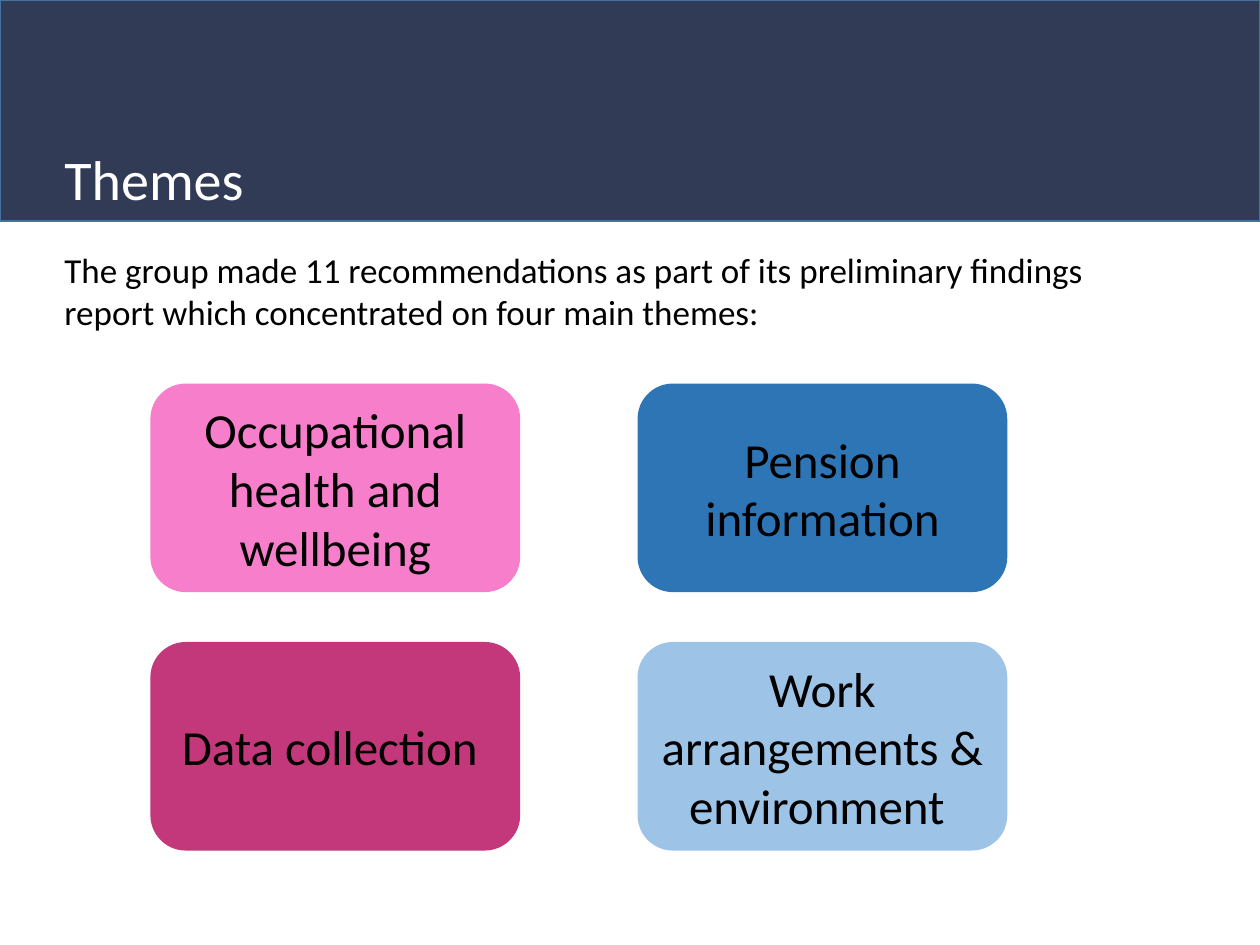
from dataclasses import dataclass

from pptx import Presentation
from pptx import util as u
from pptx.dml.color import RGBColor
from pptx.enum import shapes, text

FONT = "Calibri"
BLACK, WHITE = "000000", "FFFFFF"
NAVY, BANNER_EDGE = "313B55", "43739E"

# Theme grid, in centimetres
GRID_LEFT, GRID_TOP = 3.05, 7.75
COLUMN_STEP, ROW_STEP = 9.82, 5.21
BOX_WIDTH, BOX_HEIGHT = 7.42, 4.17


@dataclass
class Theme:
    label: str
    color: str
    column: int
    row: int


THEMES = [
    Theme("Occupational health and wellbeing", "F67ECB", 0, 0),
    Theme("Data collection ", "C3387A", 0, 1),
    Theme("Work arrangements & environment ", "9DC3E6", 1, 1),
    Theme("Pension information", "2E75B6", 1, 0),
]


def rgb(color: str) -> RGBColor:
    return RGBColor.from_string(color)


def write(shape, content: str, *, size: float, color: str = BLACK,
          align=text.PP_ALIGN.LEFT, anchor=text.MSO_ANCHOR.TOP,
          line_spacing: float = 1.0) -> None:
    frame = shape.text_frame
    frame.word_wrap = True
    frame.vertical_anchor = anchor
    paragraph = frame.paragraphs[0]
    paragraph.alignment = align
    paragraph.line_spacing = line_spacing
    run = paragraph.add_run()
    run.text = content
    run.font.name = FONT
    run.font.size = u.Pt(size)
    run.font.color.rgb = rgb(color)


def add_box(slide, kind, left: float, top: float, width: float,
            height: float, fill: str, line: str):
    shape = slide.shapes.add_shape(
        kind, u.Cm(left), u.Cm(top), u.Cm(width), u.Cm(height))
    shape.shadow.inherit = False
    shape.fill.solid()
    shape.fill.fore_color.rgb = rgb(fill)
    shape.line.color.rgb = rgb(line)
    shape.line.width = u.Pt(1)
    return shape


def add_text(slide, content: str, left: float, top: float, width: float,
             height: float, **style) -> None:
    box = slide.shapes.add_textbox(
        u.Cm(left), u.Cm(top), u.Cm(width), u.Cm(height))
    write(box, content, **style)


def add_theme(slide, theme: Theme) -> None:
    box = add_box(slide, shapes.MSO_SHAPE.ROUNDED_RECTANGLE,
                  GRID_LEFT + theme.column * COLUMN_STEP,
                  GRID_TOP + theme.row * ROW_STEP,
                  BOX_WIDTH, BOX_HEIGHT, theme.color, theme.color)
    write(box, theme.label, size=28, align=text.PP_ALIGN.CENTER,
          anchor=text.MSO_ANCHOR.MIDDLE)


def main() -> None:
    presentation = Presentation()
    presentation.slide_width, presentation.slide_height = u.Cm(25.4), u.Cm(19.05)
    slide = presentation.slides.add_slide(presentation.slide_layouts[6])

    # Banner and title
    add_box(slide, shapes.MSO_SHAPE.RECTANGLE, 0, 0, 25.4, 4.45, NAVY, BANNER_EDGE)
    add_text(slide, "Themes", 1.05, 2.95, 23.35, 1.5,
             size=32, color=WHITE, line_spacing=0.9)

    # Four themes
    for theme in THEMES:
        add_theme(slide, theme)

    # Introduction
    add_text(slide, "The group made 11 recommendations as part of its preliminary "
             "findings report which concentrated on four main themes:",
             1.05, 4.88, 21.97, 1.96, size=20)

    presentation.save("out.pptx")


if __name__ == "__main__":
    main()
